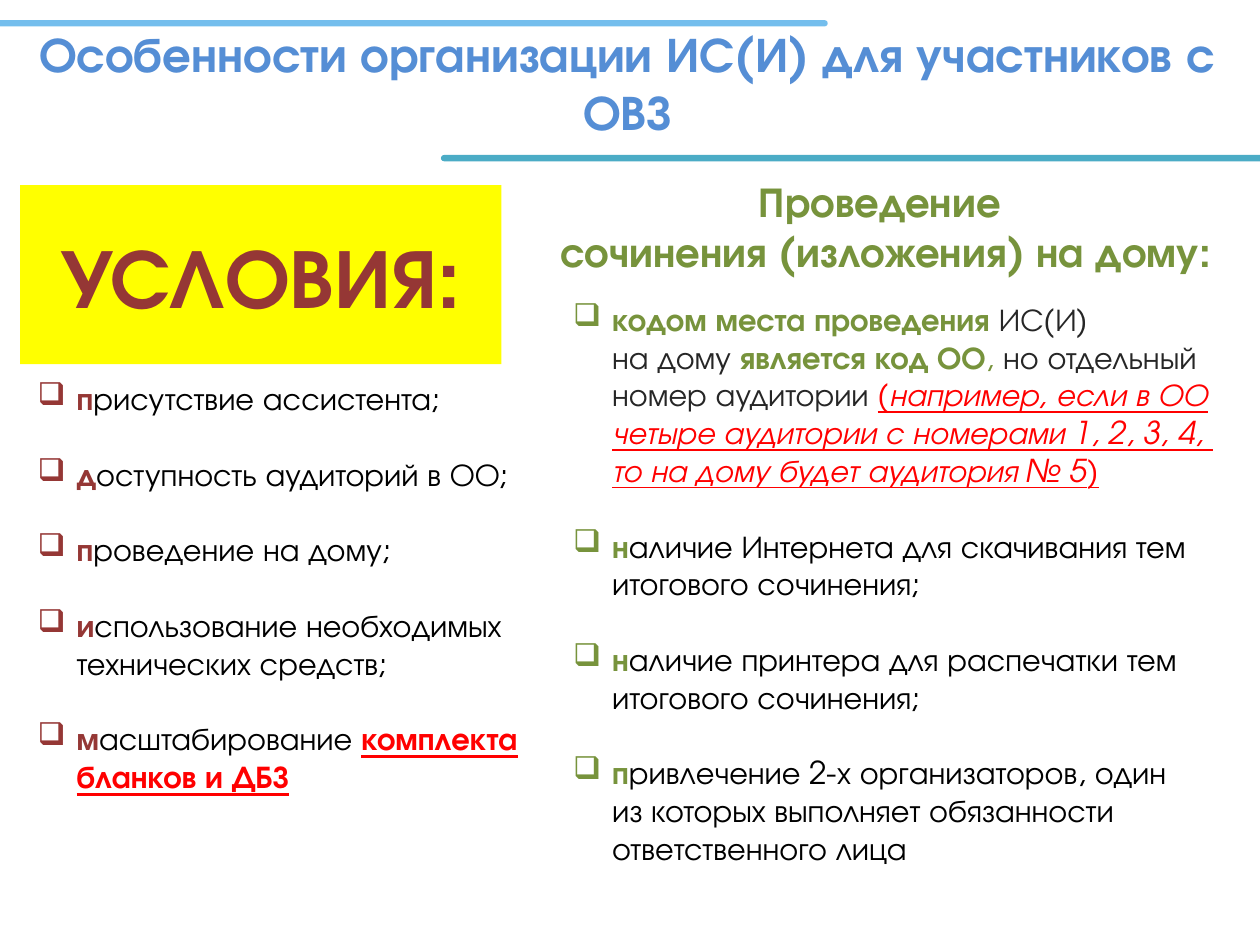
from dataclasses import dataclass

from lxml import etree
from pptx import Presentation
from pptx.dml.color import RGBColor
from pptx.enum import shapes, text
from pptx.oxml import ns
from pptx.util import Inches, Pt


@dataclass(frozen=True)
class Theme:
    font: str = "TeX Gyre Adventor"
    blue: str = "558ED5"
    maroon: str = "953735"
    green: str = "77933C"
    red: str = "FF0000"
    black: str = "000000"
    gray: str = "262626"
    yellow: str = "FFFF00"
    teal: str = "4BACC6"
    sky: str = "74BEED"
    title: float = 28
    banner: float = 48
    heading: float = 24
    body: float = 18
    gap: float = 21.6


T = Theme()


def write(p, string, size, color, **formats):
    """Add text to a paragraph; each newline becomes a line break."""
    for i, line in enumerate(string.split("\n")):
        if i:
            p.add_line_break()
        r = p.add_run()
        r.text = line
        r.font.color.rgb = RGBColor.from_string(color)
        for name, value in {"name": T.font, "size": Pt(size), **formats}.items():
            setattr(r.font, name, value)


def add_block(s, box, fill=None, kind=None, anchor=text.MSO_ANCHOR.TOP):
    """Add a text box, or a filled preset shape when a kind is given."""
    place = [Inches(v) for v in box]
    if kind is None:
        sp = s.shapes.add_textbox(*place)
    else:
        sp = s.shapes.add_shape(kind, *place)
        sp.shadow.inherit = False
        sp.fill.solid()
        sp.fill.fore_color.rgb = RGBColor.from_string(fill)
        sp.line.fill.background()
    sp.text_frame.word_wrap = True
    sp.text_frame.vertical_anchor = anchor
    return sp


prs = Presentation()
prs.slide_width, prs.slide_height = Inches(10), Inches(7.5)
s = prs.slides.add_slide(prs.slide_layouts[6])

# Title, yellow banner and right-hand heading
middle, top = text.MSO_ANCHOR.MIDDLE, text.MSO_ANCHOR.TOP
rect = shapes.MSO_SHAPE.RECTANGLE
headings = [
    ("Особенности организации ИС(И) для участников с ОВЗ",
     (0.08, 0.07, 9.8, 1.16), T.title, T.blue, None, None, middle),
    ("УСЛОВИЯ:",
     (0.16, 1.47, 3.82, 1.42), T.banner, T.maroon, T.yellow, rect, middle),
    ("Проведение \nсочинения (изложения) на дому:",
     (4.06, 1.34, 5.94, 0.91), T.heading, T.green, None, None, top),
]
for string, box, size, color, fill, kind, anchor in headings:
    p = add_block(s, box, fill, kind, anchor).text_frame.paragraphs[0]
    p.alignment = text.PP_ALIGN.CENTER
    write(p, string, size, color, bold=True)

# Run styles: colour and font formats
maroon = (T.maroon, {"bold": True})
green = (T.green, {"bold": True})
comma = (T.green, {})
plain = (T.black, {})
gray = (T.gray, {})
alert = (T.red, {"bold": True, "underline": True})
mark = (T.red, {"underline": True})
example = (T.red, {"italic": True, "underline": True})

# Bulleted lists: each item is a list of (text, style)
conditions = [
    [("п", maroon), ("рисутствие ассистента;", plain)],
    [("д", maroon), ("оступность аудиторий в ОО;", plain)],
    [("п", maroon), ("роведение на дому;", plain)],
    [("и", maroon), ("спользование необходимых технических средств;", plain)],
    [("м", maroon), ("асштабирование ", plain),
     ("комплекта бланков и ДБЗ", alert)],
]
at_home = [
    [("кодом места проведения ", green), ("ИС(И) \nна дому ", gray),
     ("является код ОО", green), (", ", comma),
     ("но отдельный номер аудитории ", gray), ("(", mark),
     ("например, если в ОО четыре аудитории с номерами 1, 2, 3, 4, \n"
      "то на дому будет аудитория № 5", example), (")", mark)],
    [("н", green),
     ("аличие Интернета для скачивания тем итогового сочинения;", plain)],
    [("н", green),
     ("аличие принтера для распечатки тем итогового сочинения;", plain)],
    [("п", green),
     ("ривлечение 2-х организаторов, один \n"
      "из которых выполняет обязанности ответственного лица", plain)],
]
indent = Inches(0.31)
for box, items in [((0.2, 2.96, 4.33, 3.43), conditions),
                   ((4.45, 2.33, 5.28, 4.95), at_home)]:
    tf = add_block(s, box).text_frame
    for i, item in enumerate(items):
        p = tf.add_paragraph() if i else tf.paragraphs[0]
        p.space_before = Pt(T.gap if i else 0)
        pPr = p._p.get_or_add_pPr()
        pPr.set("marL", str(indent))
        pPr.set("indent", str(-indent))
        etree.SubElement(pPr, ns.qn("a:buChar")).set("char", "❑")
        for string, (color, formats) in item:
            write(p, string, T.body, color, **formats)

# Rounded bars above and below the title
for left, y, color in [(3.5, 1.23, T.teal), (-1.79, 0.16, T.sky)]:
    sp = add_block(s, (left, y, 8.36, 0.05), color,
                   shapes.MSO_SHAPE.ROUNDED_RECTANGLE)
    sp.adjustments[0] = 0.5

prs.save("out.pptx")
